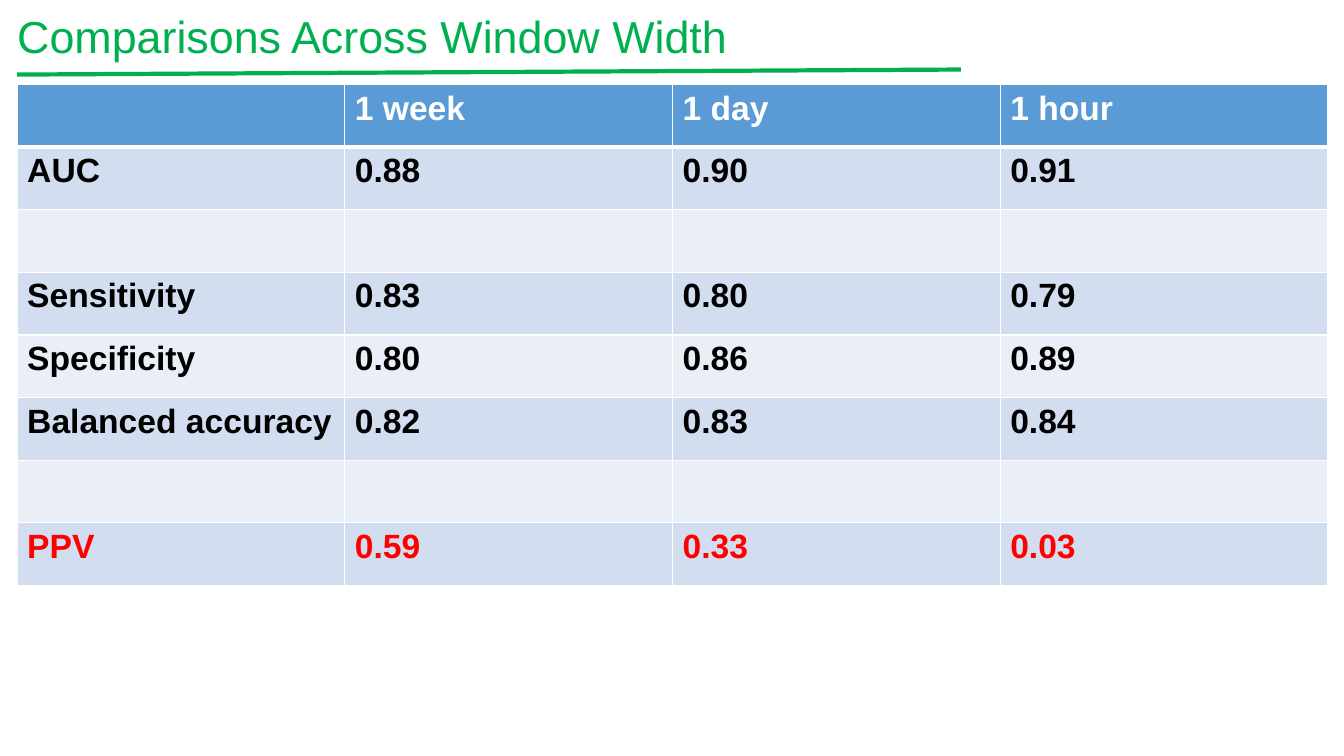
from dataclasses import dataclass

from pptx import Presentation
from pptx.dml.color import RGBColor
from pptx.enum import shapes, text
from pptx.oxml import ns, xmlchemy
from pptx.util import Inches, Pt


@dataclass(frozen=True)
class Theme:
    font: str = "Arial"
    title_size: int = 32
    cell_size: int = 24
    green: str = "00B050"
    white: str = "FFFFFF"
    black: str = "000000"
    red: str = "FF0000"
    header: str = "5B9BD5"
    bands: tuple = ("D2DEEF", "EAEFF7")


THEME = Theme()

ROWS = [
    ("", "1 week", "1 day", "1 hour"),
    ("AUC", "0.88", "0.90", "0.91"),
    ("", "", "", ""),
    ("Sensitivity", "0.83", "0.80", "0.79"),
    ("Specificity", "0.80", "0.86", "0.89"),
    ("Balanced accuracy", "0.82", "0.83", "0.84"),
    ("", "", "", ""),
    ("PPV", "0.59", "0.33", "0.03"),
]


def write(tf, content, *, size, color, bold=False):
    p = tf.paragraphs[0]
    p.alignment = text.PP_ALIGN.LEFT
    p.font.size = Pt(size)
    if content:
        r = p.add_run()
        r.text = content
        r.font.name = THEME.font
        r.font.size = Pt(size)
        r.font.bold = bold
        r.font.color.rgb = RGBColor.from_string(color)


def add_title(s, content):
    sp = s.shapes.title
    sp.left, sp.top = Inches(0.07), Inches(0.04)
    sp.width, sp.height = Inches(13), Inches(0.64)
    tf = sp.text_frame
    tf.word_wrap = True
    tf.auto_size = text.MSO_AUTO_SIZE.SHAPE_TO_FIT_TEXT
    tf.vertical_anchor = text.MSO_ANCHOR.TOP
    write(tf, content, size=THEME.title_size, color=THEME.green)


def add_rule(s, x1, y1, x2, y2):
    line = s.shapes.add_connector(
        shapes.MSO_CONNECTOR.STRAIGHT, Inches(x1), Inches(y1), Inches(x2), Inches(y2)
    )
    line.line.color.rgb = RGBColor.from_string(THEME.green)
    line.line.width = Pt(3)
    line._element.spPr.append(xmlchemy.OxmlElement("a:effectLst"))


def set_borders(cell, **widths):
    tc_pr = cell._tc.get_or_add_tcPr()
    for side in "LRTB":
        ln = xmlchemy.OxmlElement(f"a:ln{side}")
        ln.set("w", str(Pt(widths.get(side, 1))))
        fill = xmlchemy.OxmlElement("a:solidFill")
        color = xmlchemy.OxmlElement("a:srgbClr")
        color.set("val", THEME.white)
        fill.append(color)
        ln.append(fill)
        tc_pr.append(ln)


def row_style(i):
    if i == 0:
        return THEME.header, THEME.white, {"B": 3}
    color = THEME.red if ROWS[i][0] == "PPV" else THEME.black
    return THEME.bands[(i - 1) % 2], color, {"T": 3} if i == 1 else {}


def add_results(s):
    table = s.shapes.add_table(
        len(ROWS), len(ROWS[0]), Inches(0.17), Inches(0.84), Inches(13), Inches(4.97)
    ).table
    for i, values in enumerate(ROWS):
        fill, color, borders = row_style(i)
        for j, value in enumerate(values):
            cell = table.cell(i, j)
            set_borders(cell, **borders)
            cell.fill.solid()
            cell.fill.fore_color.rgb = RGBColor.from_string(fill)
            write(cell.text_frame, value, size=THEME.cell_size, color=color, bold=True)


def main():
    prs = Presentation()
    prs.slide_width, prs.slide_height = Inches(13.33), Inches(7.5)
    s = prs.slides.add_slide(prs.slide_layouts[5])
    add_results(s)
    add_rule(s, 0.17, 0.74, 9.53, 0.69)
    add_title(s, "Comparisons Across Window Width")
    prs.save("out.pptx")


if __name__ == "__main__":
    main()
